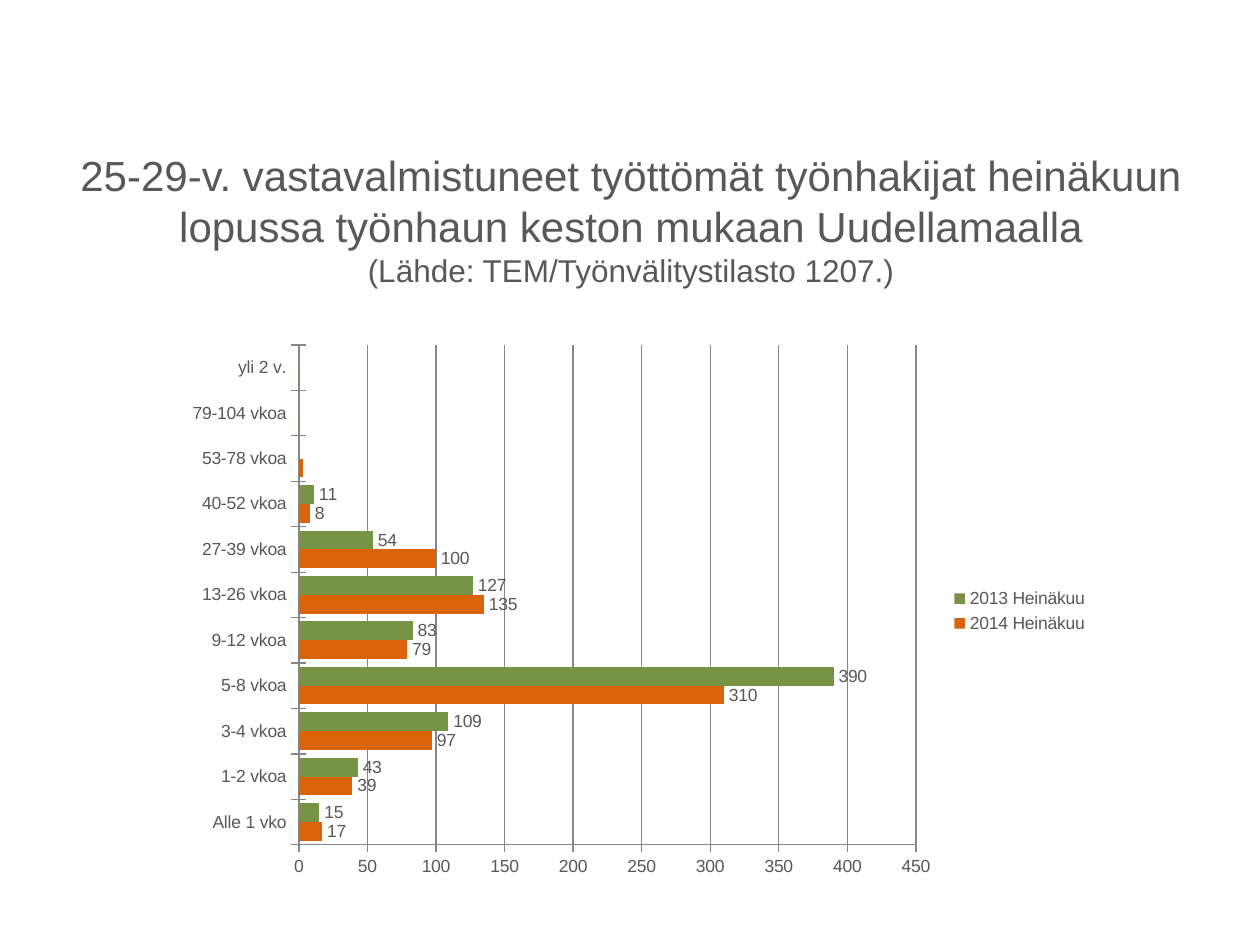
from dataclasses import dataclass

from pptx import Presentation
from pptx.chart.data import CategoryChartData
from pptx.dml.color import RGBColor
from pptx.enum.chart import XL_CHART_TYPE, XL_LABEL_POSITION, XL_LEGEND_POSITION, XL_TICK_MARK
from pptx.enum.text import MSO_ANCHOR, MSO_AUTO_SIZE, PP_ALIGN
from pptx.util import Emu, Pt

BARS = XL_CHART_TYPE.BAR_CLUSTERED
OUT = XL_LABEL_POSITION.OUTSIDE_END
RIGHT = XL_LEGEND_POSITION.RIGHT
CROSS = XL_TICK_MARK.CROSS
MIDDLE = MSO_ANCHOR.MIDDLE
FIXED = MSO_AUTO_SIZE.NONE
CENTER = PP_ALIGN.CENTER
SCALE = 914400 / 126


@dataclass(frozen=True)
class Theme:
    """Colours, face and type sizes."""
    face: str = "Arial"
    ink: str = "58585A"
    grid: str = "868686"
    head: int = 24
    sub: int = 18
    small: int = 10


THEME = Theme()
HEAD = "25-29-v. vastavalmistuneet työttömät työnhakijat heinäkuun lopussa työnhaun keston mukaan Uudellamaalla"
SOURCE = "(Lähde: TEM/Työnvälitystilasto 1207.)"
WEEKS = ["Alle 1 vko", "1-2 vkoa", "3-4 vkoa", "5-8 vkoa", "9-12 vkoa", "13-26 vkoa",
         "27-39 vkoa", "40-52 vkoa", "53-78 vkoa", "79-104 vkoa", "yli 2 v."]
YEARS = [
    ("2014 Heinäkuu", "D9640C", [17, 39, 97, 310, 79, 135, 100, 8, 3, 0, 0]),
    ("2013 Heinäkuu", "779346", [15, 43, 109, 390, 83, 127, 54, 11, 0, 0, 0]),
]
LABELLED = 8


def px(count):
    """Turn pixels into EMU."""
    return Emu(round(count * SCALE))


def apply(target, values):
    """Set each attribute in values on target."""
    for name, value in values.items():
        setattr(target, name, value)


def style(font, size):
    """Give a font the theme face, ink and a size."""
    apply(font, {"name": THEME.face, "size": Pt(size), "bold": False})
    font.color.rgb = RGBColor.from_string(THEME.ink)


def add_title(slide, box):
    """Fill the title placeholder with heading and source."""
    title = slide.shapes.title
    apply(title, dict(zip(("left", "top", "width", "height"), map(px, box))))
    frame = title.text_frame
    apply(frame, {"word_wrap": True, "auto_size": FIXED, "vertical_anchor": MIDDLE})
    para = frame.paragraphs[0]
    para.alignment = CENTER
    for text, size in ((HEAD, THEME.head), (SOURCE, THEME.sub)):
        if para.runs:
            para.add_line_break()
        run = para.add_run()
        run.text = text
        style(run.font, size)


def add_bars(slide, box):
    """Place the clustered bar chart in the box."""
    data = CategoryChartData()
    data.categories = WEEKS
    for name, _, values in YEARS:
        data.add_series(name, values)
    chart = slide.shapes.add_chart(BARS, *map(px, box), data).chart
    apply(chart, {"has_title": False, "has_legend": True})
    style(chart.font, THEME.small)
    apply(chart.legend, {"position": RIGHT, "include_in_layout": False})
    plot = chart.plots[0]
    apply(plot, {"gap_width": 42, "overlap": 0, "vary_by_categories": False})
    grey = RGBColor.from_string(THEME.grid)
    for axis in (chart.category_axis, chart.value_axis):
        apply(axis, {"major_tick_mark": CROSS, "has_major_gridlines": axis is chart.value_axis})
        axis.format.line.color.rgb = grey
    lines = chart.value_axis
    lines.has_major_gridlines = True
    lines.major_gridlines.format.line.color.rgb = grey
    chart.category_axis.has_major_gridlines = False
    for series, (_, color, _) in zip(plot.series, YEARS):
        series.format.fill.solid()
        series.format.fill.fore_color.rgb = RGBColor.from_string(color)
        for index in range(LABELLED):
            label = series.points[index].data_label
            label.position = OUT
            style(label.font, THEME.small)
        series.data_labels.show_value = False


def main():
    """Build and save the slide."""
    deck = Presentation()
    apply(deck, {"slide_width": px(1260), "slide_height": px(945)})
    slide = deck.slides.add_slide(deck.slide_layouts[5])
    add_title(slide, (64, 175, 1134, 88))
    add_bars(slide, (174, 334, 927, 554))
    deck.save("out.pptx")


if __name__ == "__main__":
    main()
